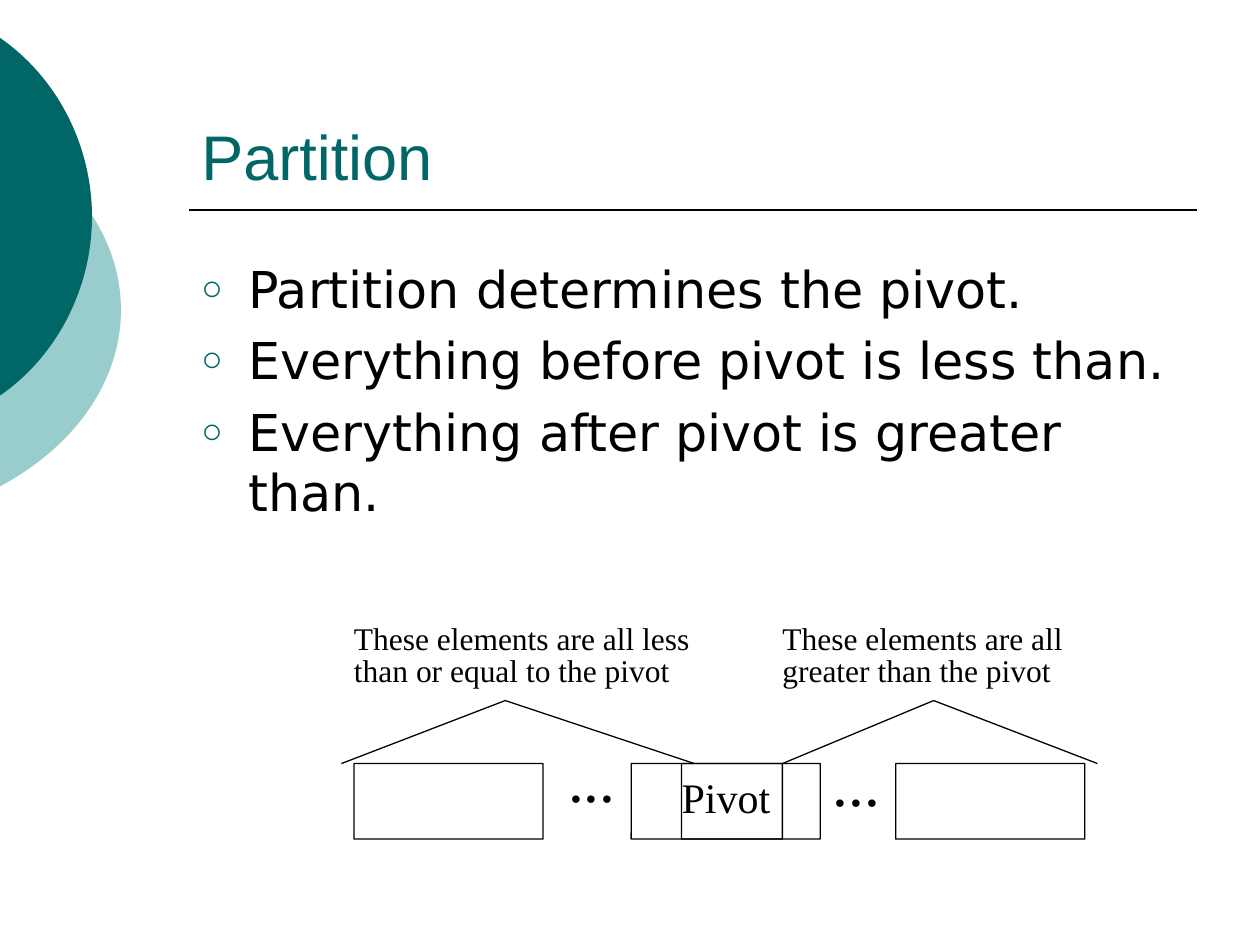
"""Builds the Partition slide on a grid of 100 columns by 75 rows."""
import pptx
import pptx.dml.color
import pptx.enum.shapes
import pptx.enum.text
import pptx.oxml.ns
import pptx.util
from lxml import etree

CELL = 0.1
LEFT, TOP = 27.1, 49.6
BAR_ROW, PEAK_ROW = TOP + 11, TOP + 6
TEAL, PALE, BLACK = "006666", "99CCCC", "000000"
BODY = [
    "Partition determines the pivot.",
    "Everything before pivot is less than.",
    "Everything after pivot is greater than.",
]


def grid(*cells):
    """Turn grid counts into lengths."""
    return [pptx.util.Inches(cell * CELL) for cell in cells]


def colour(value):
    """Turn a hex string into a colour."""
    return pptx.dml.color.RGBColor.from_string(value)


def add_child(parent, tag, **attributes):
    """Append a drawing element to a parent."""
    return etree.SubElement(parent, pptx.oxml.ns.qn(tag), **attributes)


def add_disc(slide, frame, top, middle, reach, bulge, shoulder, fill):
    """Draw the part of a disc that rises from the slide's left edge."""
    bottom = 2 * middle - top
    upper = [(bulge, shoulder[0]), (reach, shoulder[1]), (reach, middle)]
    lower = [(reach, 2 * middle - shoulder[1]), (bulge, 2 * middle - shoulder[0]), (0, bottom)]
    builder = slide.shapes.build_freeform(*grid(0, top))
    builder.add_line_segments([tuple(grid(reach, middle)), tuple(grid(0, bottom))])
    shape = builder.convert_to_shape()
    shape.left, shape.top, shape.width, shape.height = grid(*frame)
    outline = shape._element.find(".//" + pptx.oxml.ns.qn("a:path"))
    for part in list(outline):
        outline.remove(part)
    outline.set("w", str(shape.width))
    outline.set("h", str(shape.height))
    curves = [("a:moveTo", [(0, top)]), ("a:cubicBezTo", upper), ("a:cubicBezTo", lower)]
    for tag, points in curves:
        part = add_child(outline, tag)
        for column, row in points:
            x, y = grid(column - frame[0], row - frame[1])
            add_child(part, "a:pt", x=str(x), y=str(y))
    add_child(outline, "a:close")
    shape.shadow.inherit = False
    shape.fill.solid()
    shape.fill.fore_color.rgb = colour(fill)
    shape.line.fill.background()


def add_line(slide, start, end, width=0.75):
    """Draw a straight black line between two grid points."""
    connector = slide.shapes.add_connector(
        pptx.enum.shapes.MSO_CONNECTOR.STRAIGHT, *grid(*start, *end))
    connector.line.color.rgb = colour(BLACK)
    connector.line.width = pptx.util.Pt(width)
    add_child(connector._element.spPr, "a:effectLst")


def add_box(slide, column, width):
    """Draw an outlined box of the array."""
    shape = slide.shapes.add_shape(
        pptx.enum.shapes.MSO_SHAPE.ROUNDED_RECTANGLE, *grid(column, BAR_ROW, width, 6))
    shape.adjustments[0] = 0.003
    shape.shadow.inherit = False
    shape.fill.background()
    shape.line.color.rgb = colour(BLACK)
    shape.line.width = pptx.util.Pt(0.75)


def add_text(slide, area, text, font, size, fill=BLACK):
    """Add a wrapped text box and return its frame."""
    frame = slide.shapes.add_textbox(*grid(*area)).text_frame
    frame.word_wrap = True
    frame.text = text
    for paragraph in frame.paragraphs:
        for run in paragraph.runs:
            run.font.name = font
            run.font.size = pptx.util.Pt(size)
            run.font.color.rgb = colour(fill)
    return frame


def add_label(slide, area, text, size):
    """Add a diagram label without margins or wrapping."""
    frame = add_text(slide, area, text, "Times New Roman", size)
    frame.word_wrap = False
    frame.margin_left = frame.margin_right = frame.margin_top = frame.margin_bottom = 0
    frame.paragraphs[0].line_spacing = 0.85


def add_bullet(paragraph):
    """Give a paragraph a hanging teal ring bullet."""
    paragraph.space_before = pptx.util.Pt(5.8)
    properties = paragraph._p.get_or_add_pPr()
    indent = grid(3.75)[0]
    properties.set("marL", str(indent))
    properties.set("indent", str(-indent))
    add_child(add_child(properties, "a:buClr"), "a:srgbClr", val=TEAL)
    add_child(properties, "a:buSzPct", val="70000")
    add_child(properties, "a:buFont", typeface="Arial")
    add_child(properties, "a:buChar", char="○")


def add_diagram(slide):
    """Draw the partitioned array with its labels and roofs."""
    for column, width in [(44, 15), (1, 15), (23, 15), (27, 8)]:
        add_box(slide, LEFT + column, width)
    add_label(slide, (LEFT + 27, TOP + 12.25, 7.1, 3.8), "Pivot", 24)
    for column, row in [(18, 10), (39, 10.3)]:
        add_label(slide, (LEFT + column, TOP + row, 3.8, 5.7), "...", 36)
    sides = [
        (1, "These elements are all less\vthan or equal to the pivot", (0, 13, 28)),
        (35, "These elements are all\vgreater than the pivot", (35, 47, 60)),
    ]
    for column, text, (start, peak, end) in sides:
        add_label(slide, (LEFT + column, TOP, 27, 7), text, 18)
        add_line(slide, (LEFT + start, BAR_ROW), (LEFT + peak, PEAK_ROW))
        add_line(slide, (LEFT + peak, PEAK_ROW), (LEFT + end, BAR_ROW))


def main():
    """Build and save the slide."""
    presentation = pptx.Presentation()
    presentation.slide_width, presentation.slide_height = grid(100, 75)
    slide = presentation.slides.add_slide(presentation.slide_layouts[6])
    add_disc(slide, (-35.4, 7.5, 45, 34.2), 10.6, 24.6, 9.6, 6, (13.8, 19), PALE)
    add_disc(slide, (-26.5, 0, 33.8, 34.5), 3, 17.2, 7.3, 4.6, (6.2, 11.6), TEAL)
    add_line(slide, (15, 16.67), (95, 16.67), 1)
    title = add_text(slide, (15, 3.3, 80, 12.5), "Partition", "Arial", 36, TEAL)
    title.vertical_anchor = pptx.enum.text.MSO_ANCHOR.BOTTOM
    body = add_text(slide, (15, 20, 80, 45), "\n".join(BODY), "DejaVu Sans", 29)
    for paragraph in body.paragraphs:
        add_bullet(paragraph)
    add_diagram(slide)
    presentation.save("out.pptx")


if __name__ == "__main__":
    main()
